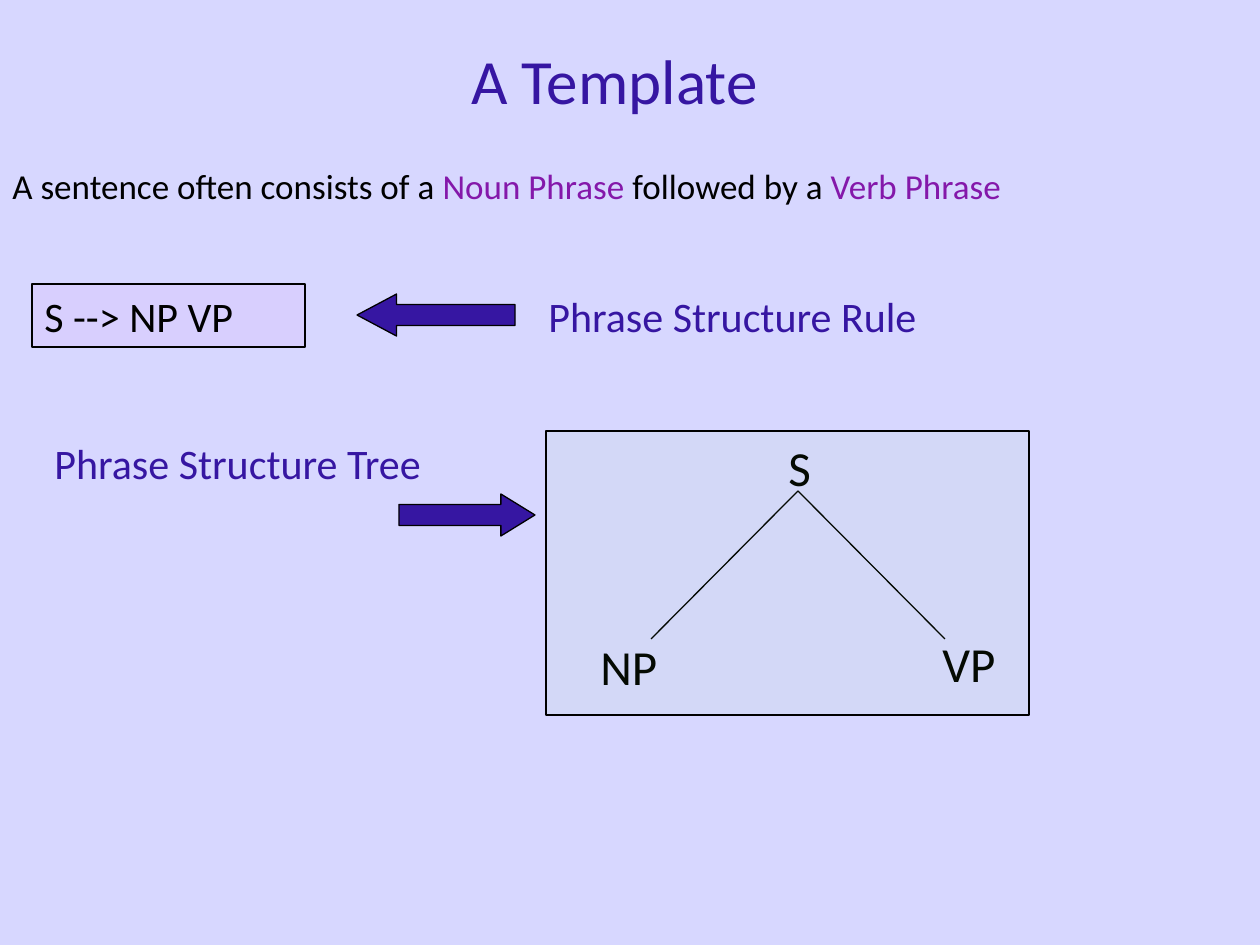
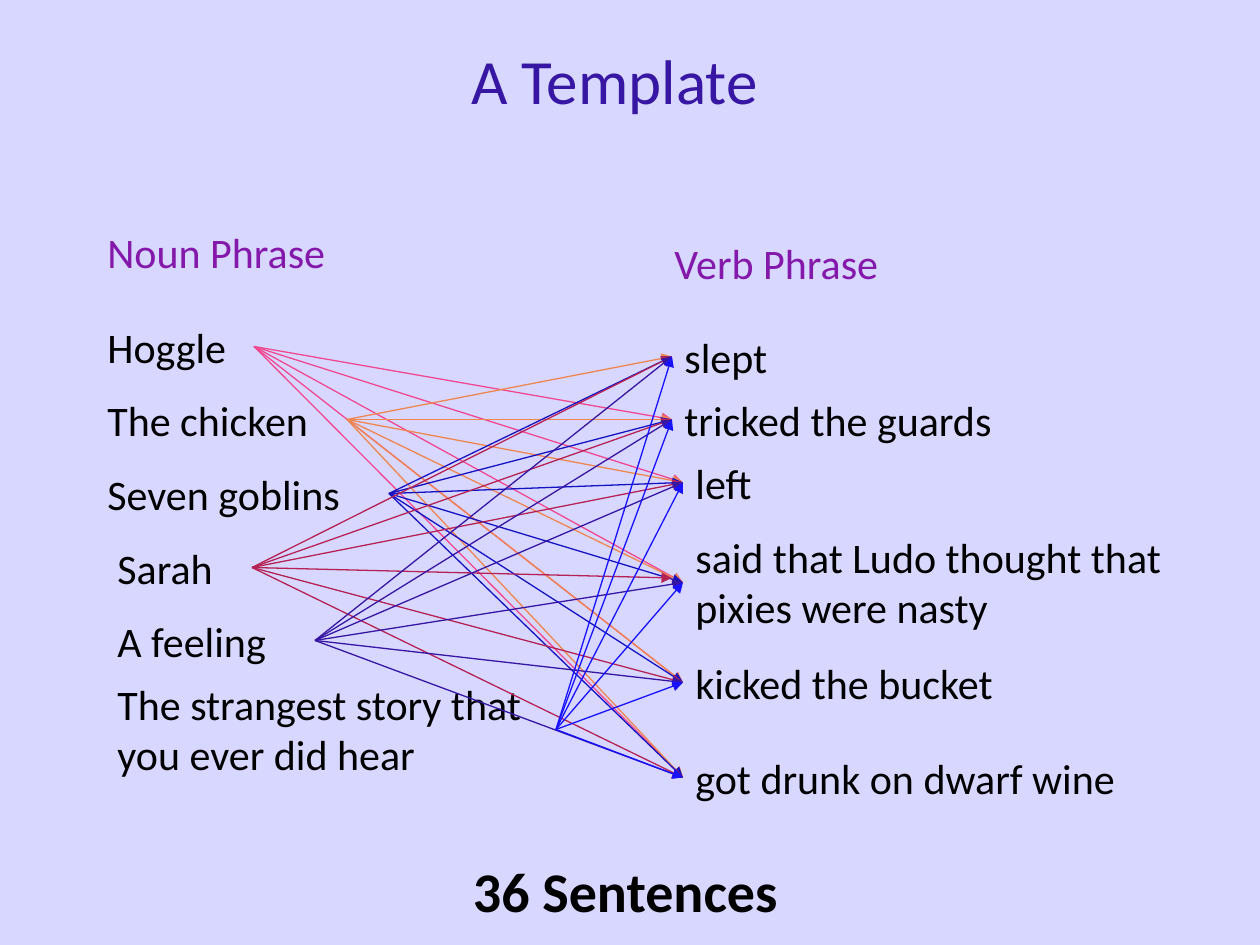
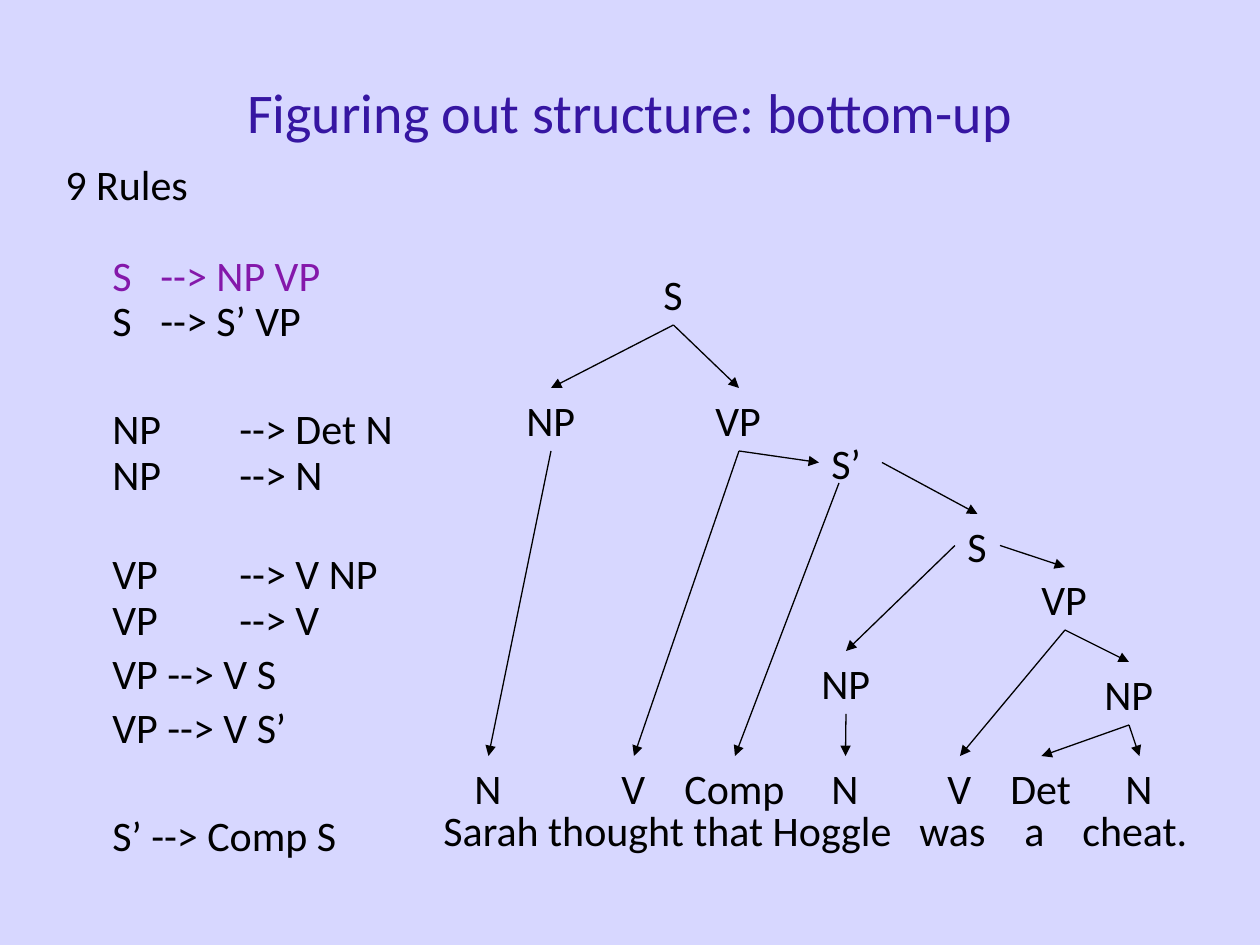
import pptx
import pptx.dml.color
import pptx.enum.shapes
import pptx.enum.text
import pptx.oxml
import pptx.oxml.ns
import pptx.util

RGB = pptx.dml.color.RGBColor
SHAPE = pptx.enum.shapes.MSO_SHAPE
ALIGN = pptx.enum.text.PP_ALIGN

LAVENDER = RGB(0xD7, 0xD7, 0xFF)
INDIGO = RGB(0x36, 0x16, 0xA2)
PURPLE = RGB(0x84, 0x18, 0xAA)
BLACK = RGB(0, 0, 0)
MAGENTA = RGB(0xFF, 0x24, 0xE9)
GREEN = RGB(0x73, 0xFF, 0x47)
PINK = RGB(0xF0, 0x49, 0x8F)
ORANGE = RGB(0xF0, 0x86, 0x4F)
NAVY = RGB(0x16, 0x12, 0xC1)
CRIMSON = RGB(0xB5, 0x22, 0x54)
BLUE = RGB(0x17, 0x11, 0xFF)

FONT = "Calibri"
EMU_PER_PX = 914400 / 126
TOP, LEFT, BOTTOM, RIGHT = range(4)


def emu(*lengths):
    return [round(length * EMU_PER_PX) for length in lengths]


def add_xml(parent, tag, **attributes):
    child = pptx.oxml.parse_xml(f"<a:{tag} {pptx.oxml.ns.nsdecls('a')}/>")
    for name, value in attributes.items():
        child.set(name, str(value))
    parent.append(child)
    return child


class Painter:
    """Holds the deck's style and draws on the current page, in px."""

    def __init__(self):
        self.deck = pptx.Presentation()
        self.deck.slide_width, self.deck.slide_height = emu(1260, 945)
        self.page = None

    def new_page(self):
        self.page = self.deck.slides.add_slide(self.deck.slide_layouts[6])
        self.page.background.fill.solid()
        self.page.background.fill.fore_color.rgb = LAVENDER

    def text(self, frame, content, size=24, color=BLACK, wrap=True, **style):
        box = self.page.shapes.add_textbox(*emu(*frame))
        box.text_frame.word_wrap = wrap
        if not wrap:
            box.text_frame.auto_size = pptx.enum.text.MSO_AUTO_SIZE.SHAPE_TO_FIT_TEXT
        self.fill_para(box.text_frame.paragraphs[0], content, size, color, **style)
        return box

    def fill_para(self, para, content, size=24, color=BLACK, bold=False,
                  align=ALIGN.LEFT, tabs=()):
        """Content is a string, or a list of (text, colour) spans."""
        if tabs:
            stops = add_xml(para._p.get_or_add_pPr(), "tabLst")
            for stop in emu(*tabs):
                add_xml(stops, "tab", pos=stop, algn="l")
        para.alignment = align
        para.font.name = FONT
        para.font.size = pptx.util.Pt(size)
        para.font.bold = bold
        if isinstance(content, str):
            para.font.color.rgb = color
            para.add_run().text = content
            return
        for words, span_color in content:
            span = para.add_run()
            span.text = words
            span.font.color.rgb = span_color

    def title(self, frame, words, size=36):
        box = self.text(frame, words, size, INDIGO, align=ALIGN.CENTER)
        box.text_frame.vertical_anchor = pptx.enum.text.MSO_ANCHOR.MIDDLE

    def shape(self, kind, frame, color, opacity=None, adjustments=()):
        shape = self.page.shapes.add_shape(kind, *emu(*frame))
        shape.shadow.inherit = False
        shape.fill.solid()
        shape.fill.fore_color.rgb = color
        if opacity:
            fill_color = shape._element.spPr.find(".//" + pptx.oxml.ns.qn("a:srgbClr"))
            add_xml(fill_color, "alpha", val=opacity * 1000)
        shape.line.color.rgb = BLACK
        shape.line.width = pptx.util.Pt(0.75)
        for index, value in enumerate(adjustments):
            shape.adjustments[index] = value

    def line(self, start, end, color=BLACK, arrow=True):
        """Each end is an (x, y) point or a (box, side) joint."""
        line = self.page.shapes.add_connector(
            pptx.enum.shapes.MSO_CONNECTOR.STRAIGHT,
            *[length for place in (start, end)
              for length in (emu(*place) if isinstance(place[0], int) else (0, 0))])
        for place, connect in ((start, line.begin_connect), (end, line.end_connect)):
            if not isinstance(place[0], int):
                connect(*place)
        line.line.color.rgb = color
        line.line.width = pptx.util.Pt(0.75)
        if arrow:
            add_xml(line.line._get_or_add_ln(), "tailEnd", type="triangle")
        add_xml(line._element.spPr, "effectLst")


TEMPLATE_TITLE = ((147, 0, 935, 158), "A Template")


def draw_rule_and_tree(painter):
    painter.new_page()
    painter.title(*TEMPLATE_TITLE)
    painter.text((0, 158, 1260, 116), [
        ("A sentence often consists of a ", BLACK), ("Noun Phrase", PURPLE),
        (" followed by a ", BLACK), ("Verb Phrase", PURPLE)], 20)
    for foot in (945, 651):
        painter.line((798, 491), (foot, 639), arrow=False)
    for label, frame in (("S", (776, 431, 48, 72)), ("NP", (588, 630, 83, 72)),
                         ("VP", (930, 627, 79, 72))):
        painter.text(frame, label, 28, wrap=False)
    painter.text((536, 284, 514, 63), "Phrase Structure Rule", color=INDIGO)
    painter.text((42, 431, 514, 63), "Phrase Structure Tree", color=INDIGO)
    painter.shape(SHAPE.RECTANGLE, (32, 284, 273, 63), MAGENTA, opacity=4)
    painter.shape(SHAPE.RECTANGLE, (546, 431, 483, 284), GREEN, opacity=4)
    painter.shape(SHAPE.LEFT_ARROW, (357, 294, 158, 42), INDIGO, adjustments=(0.5, 0.94))
    painter.shape(SHAPE.RIGHT_ARROW, (399, 494, 136, 42), INDIGO, adjustments=(0.5, 0.81))
    painter.text((32, 284, 215, 63), "S --> NP VP", wrap=False)


NOUN_PHRASES = [
    ("Hoggle", (95, 315, 159, 63), PINK),
    ("The chicken", (95, 388, 252, 63), ORANGE),
    ("Seven goblins", (95, 462, 294, 63), NAVY),
    ("Sarah", (105, 536, 147, 63), CRIMSON),
    ("A feeling", (105, 609, 210, 63), INDIGO),
    ("The strangest story that you ever did hear", (105, 672, 451, 115), BLUE),
]
VERB_PHRASES = [
    ("slept", (672, 325, 159, 63)),
    ("tricked the guards", (672, 388, 494, 63)),
    ("left", (683, 451, 159, 63)),
    ("said that Ludo thought that pixies were nasty", (683, 525, 557, 115)),
    ("kicked the bucket", (683, 651, 368, 63)),
    ("got drunk on dwarf wine", (683, 746, 483, 63)),
]


def draw_combinations(painter):
    painter.new_page()
    painter.text((410, 850, 431, 79), "36 Sentences", 32, bold=True, align=ALIGN.CENTER)
    painter.title(*TEMPLATE_TITLE)
    nouns = [(noun, painter.text(frame, noun), color)
             for noun, frame, color in NOUN_PHRASES]
    verbs = [(verb, painter.text(frame, verb)) for verb, frame in VERB_PHRASES]
    for noun, noun_box, color in nouns:
        for verb, verb_box in verbs:
            if (noun, verb) == ("Hoggle", "slept"):
                continue
            end = (verb_box, LEFT)
            if noun == "Sarah" and verb.startswith("said"):
                end = (672, 578)
            painter.line((noun_box, RIGHT), end, color)
    painter.text((95, 220, 294, 73), "Noun Phrase", color=PURPLE)
    painter.text((662, 231, 536, 73), "Verb Phrase", color=PURPLE)


# Text, space before in points, tab stops, colour
RULES = [
    ("9 Rules", 0, (), BLACK),
    ("\tS\t--> NP VP", 26, (47, 95), PURPLE),
    ("\tS\t--> S’ VP", 0, (47, 95), BLACK),
    ("\tNP\t--> Det N", 36, (47, 174), BLACK),
    ("\tNP\t--> N", 0, (47, 174), BLACK),
    ("\tVP\t--> V NP", 31, (47, 174), BLACK),
    ("\tVP\t--> V", 0, (47, 174), BLACK),
    ("\tVP --> V S", 5, (47,), BLACK),
    ("\tVP --> V S’", 5, (47,), BLACK),
    ("\tS’ --> Comp S", 36, (47,), BLACK),
]
NODE_WIDTHS = {"S": 45, "NP": 74, "VP": 72, "S’": 63, "N": 53, "V": 50,
               "Det": 87, "Comp": 126}
NODES = {
    "main S": ("S", 651, 262), "main NP": ("NP", 514, 388), "main VP": ("VP", 703, 388),
    "inner S": ("S", 955, 514), "inner NP": ("NP", 809, 651),
    "inner VP": ("VP", 1029, 567), "object NP": ("NP", 1092, 662),
    "S’": ("S’", 819, 431), "Det": ("Det", 998, 756), "cheat": ("N", 1113, 756),
    "was": ("V", 935, 756), "Hoggle": ("N", 819, 756), "thought": ("V", 609, 756),
    "Sarah": ("N", 462, 756), "Comp": ("Comp", 672, 756),
}
BRANCHES = [
    ("main S", BOTTOM, "main NP", TOP), ("main S", BOTTOM, "main VP", TOP),
    ("main NP", BOTTOM, "Sarah", TOP), ("main VP", BOTTOM, "thought", TOP),
    ("main VP", BOTTOM, "S’", LEFT), ("S’", RIGHT, "inner S", TOP),
    ("inner S", LEFT, "inner NP", TOP), ("inner S", RIGHT, "inner VP", TOP),
    ("inner VP", BOTTOM, "was", TOP), ("inner VP", BOTTOM, "object NP", TOP),
    ("object NP", BOTTOM, "Det", TOP), ("object NP", BOTTOM, "cheat", TOP),
    ("inner NP", BOTTOM, "Hoggle", TOP),
]


def draw_bottom_up(painter):
    painter.new_page()
    painter.title((0, 32, 1260, 158), "Figuring out structure: bottom-up", 32)

    heading, _, tabs, color = RULES[0]
    box = painter.text((53, 158, 630, 756), heading, color=color, tabs=tabs)
    for rule, gap, tabs, color in RULES[1:]:
        para = box.text_frame.add_paragraph()
        painter.fill_para(para, rule, color=color, tabs=tabs)
        para.space_before = pptx.util.Pt(gap)
    for para in box.text_frame.paragraphs:
        para.line_spacing = 0.9

    nodes = {name: painter.text((left, top, NODE_WIDTHS[label], 63), label,
                                wrap=label == "S’")
             for name, (label, left, top) in NODES.items()}
    for parent, parent_side, child, child_side in BRANCHES:
        painter.line((nodes[parent], parent_side), (nodes[child], child_side))
    painter.line((839, 483), (nodes["Comp"], TOP))
    painter.text((431, 798, 798, 63), "Sarah thought that Hoggle\twas\ta\tcheat.",
                 tabs=(476, 581, 639))


def main():
    painter = Painter()
    draw_rule_and_tree(painter)
    draw_combinations(painter)
    draw_bottom_up(painter)
    painter.deck.save("out.pptx")


if __name__ == "__main__":
    main()
